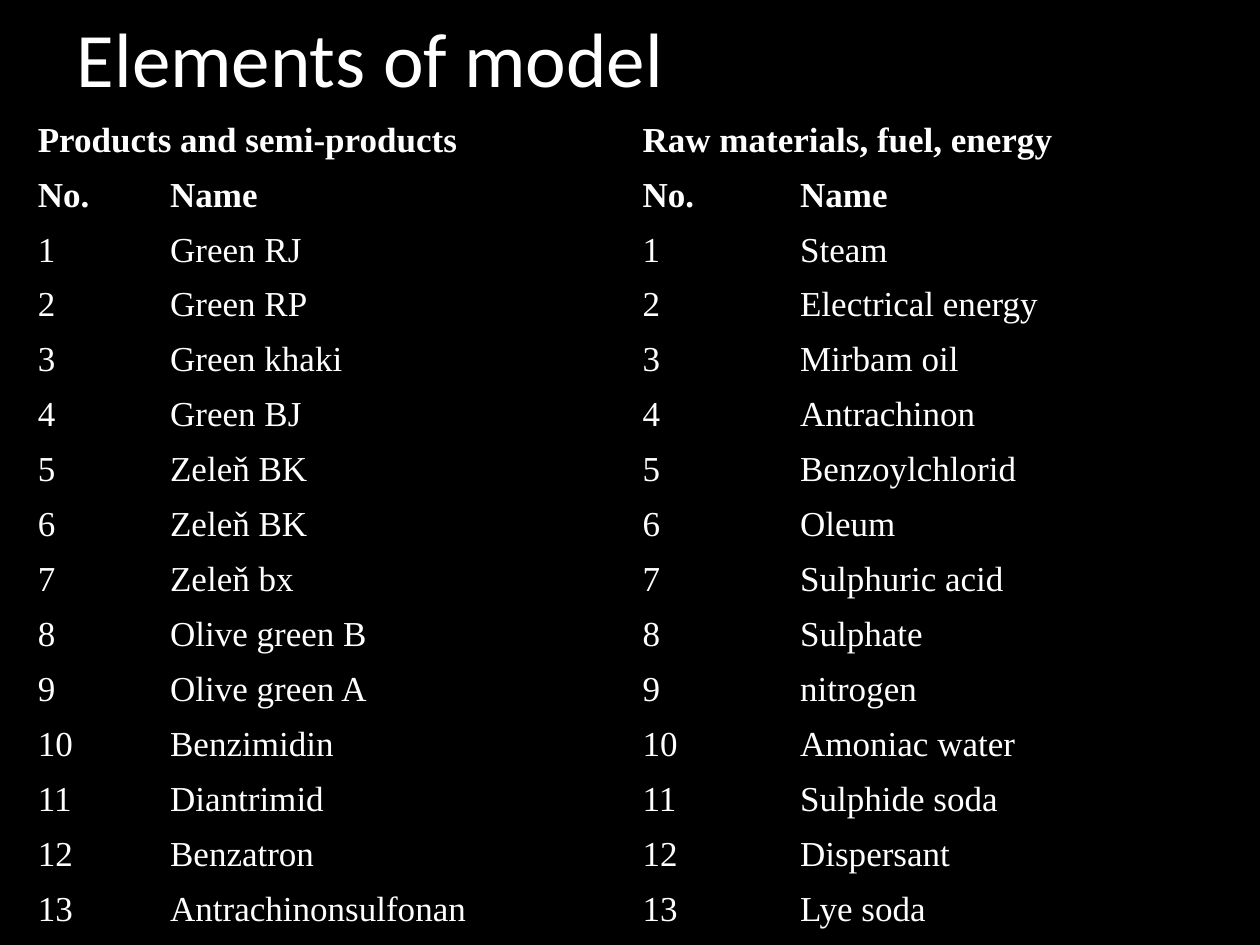
"""Build the slide listing the elements of the production model."""
from dataclasses import dataclass

from lxml import etree
from pptx import Presentation
from pptx import util as u
from pptx.dml.color import RGBColor
from pptx.enum import text
from pptx.oxml import ns

TITLE = "Elements of model"
GROUPS = {
    "Products and semi-products": [
        "Green RJ", "Green RP", "Green khaki", "Green BJ", "Zeleň BK", "Zeleň BK", "Zeleň bx",
        "Olive green B", "Olive green A", "Benzimidin", "Diantrimid", "Benzatron",
        "Antrachinonsulfonan",
    ],
    "Raw materials, fuel, energy": [
        "Steam", "Electrical energy", "Mirbam oil", "Antrachinon", "Benzoylchlorid", "Oleum",
        "Sulphuric acid", "Sulphate", "nitrogen", "Amoniac water", "Sulphide soda", "Dispersant",
        "Lye soda",
    ],
}
HEADINGS = ("No.", "Name")
COLUMNS = (1.05, 3.75, 1.25, 3.75)
TITLE_BOX = (0.51, 0, 9, 0.99)
TABLE_BOX = (0.2, 0.91, sum(COLUMNS), 6.54)


@dataclass(frozen=True)
class Theme:
    back: str = "000000"
    ink: str = "FFFFFF"
    title_font: str = "Calibri"
    table_font: str = "Times New Roman"
    title_size: int = 44
    table_size: int = 20
    border: float = 1
    indent: float = 0.38


THEME = Theme()


def add_run(p, words, font, size, bold=False):
    r = p.add_run()
    r.text = words
    r.font.name, r.font.size, r.font.bold = font, u.Pt(size), bold
    r.font.color.rgb = RGBColor.from_string(THEME.ink)


def style_cell(cell):
    tc_pr = cell._tc.get_or_add_tcPr()
    for side in "LRTB":
        ln = etree.SubElement(tc_pr, ns.qn(f"a:ln{side}"), w=str(u.Pt(THEME.border)))
        fill = etree.SubElement(ln, ns.qn("a:solidFill"))
        etree.SubElement(fill, ns.qn("a:srgbClr"), val=THEME.back)
    cell.fill.background()


def write_cell(cell, words, bold):
    p = cell.text_frame.paragraphs[0]
    p_pr = p._p.get_or_add_pPr()
    p_pr.set("marL", str(u.Inches(THEME.indent)))
    p_pr.set("indent", str(-u.Inches(THEME.indent)))
    add_run(p, words, THEME.table_font, THEME.table_size, bold)


def add_title(s):
    sp = s.shapes.title
    sp.left, sp.top, sp.width, sp.height = map(u.Inches, TITLE_BOX)
    tf = sp.text_frame
    tf.word_wrap = True
    tf.vertical_anchor = text.MSO_ANCHOR.MIDDLE
    p = tf.paragraphs[0]
    p.alignment = text.PP_ALIGN.LEFT
    p.line_spacing = 0.9
    add_run(p, TITLE, THEME.title_font, THEME.title_size)


def add_elements(s):
    count = len(HEADINGS) + max(map(len, GROUPS.values()))
    table = s.shapes.add_table(count, len(COLUMNS), *map(u.Inches, TABLE_BOX)).table
    table.first_row = table.horz_banding = False
    for column, width in zip(table.columns, COLUMNS):
        column.width = u.Inches(width)
    for cell in table.iter_cells():
        style_cell(cell)
    for group, (heading, names) in enumerate(GROUPS.items()):
        left = group * len(HEADINGS)
        head = table.cell(0, left)
        head.merge(table.cell(0, left + 1))
        write_cell(head, heading, True)
        pairs = [HEADINGS, *((str(n), name) for n, name in enumerate(names, 1))]
        for row, pair in enumerate(pairs, 1):
            for offset, words in enumerate(pair):
                write_cell(table.cell(row, left + offset), words, row == 1)


def main():
    prs = Presentation()
    prs.slide_width, prs.slide_height = u.Inches(10), u.Inches(7.5)
    s = prs.slides.add_slide(prs.slide_layouts.get_by_name("Title Only"))
    s.background.fill.solid()
    s.background.fill.fore_color.rgb = RGBColor.from_string(THEME.back)
    add_title(s)
    add_elements(s)
    prs.save("out.pptx")


if __name__ == "__main__":
    main()
